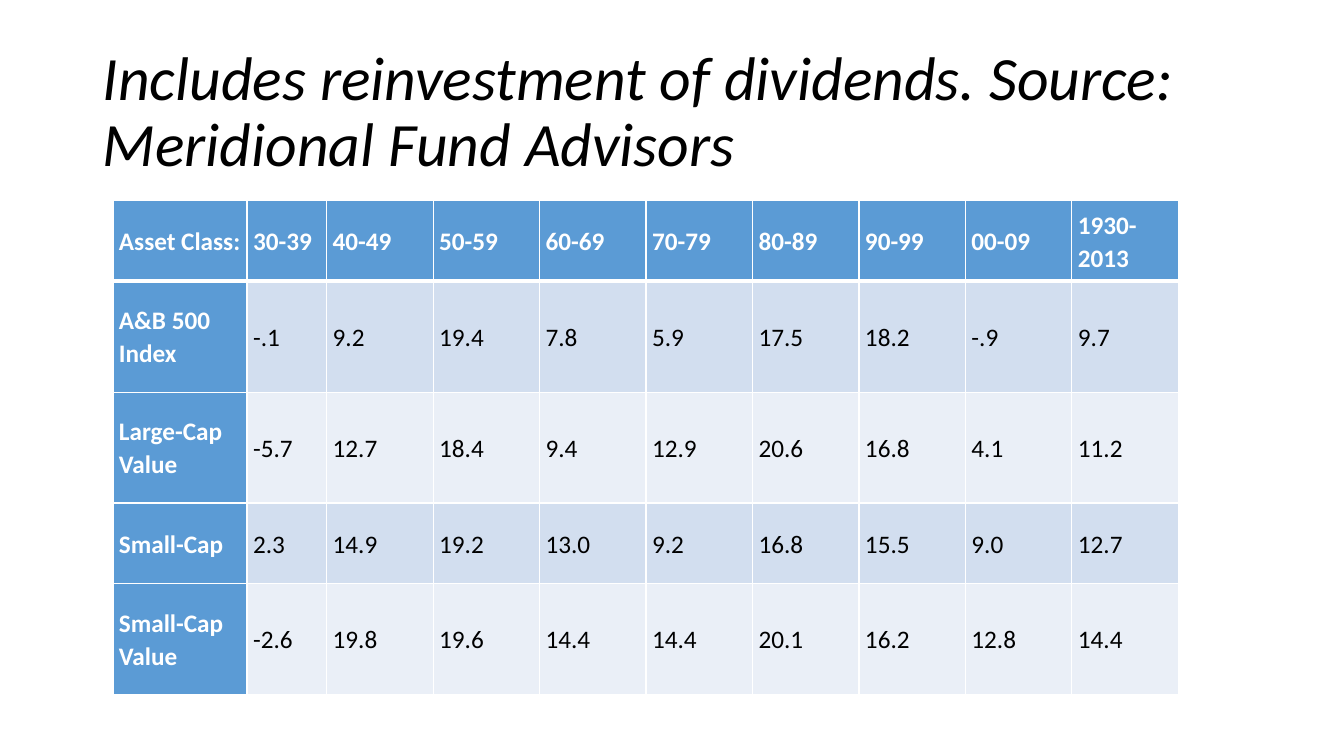
from lxml import etree
from pptx import Presentation
from pptx.dml.color import RGBColor
from pptx.enum.text import MSO_ANCHOR
from pptx.oxml.ns import qn
from pptx.util import Inches, Pt

# Content
TITLE = "Includes reinvestment of dividends. Source: Meridional Fund Advisors"
RETURNS = [
    ("Asset Class:", "30-39", "40-49", "50-59", "60-69", "70-79", "80-89", "90-99", "00-09", "1930-2013"),
    ("A&B 500 Index", "-.1", "9.2", "19.4", "7.8", "5.9", "17.5", "18.2", "-.9", "9.7"),
    ("Large-Cap Value", "-5.7", "12.7", "18.4", "9.4", "12.9", "20.6", "16.8", "4.1", "11.2"),
    ("Small-Cap", "2.3", "14.9", "19.2", "13.0", "9.2", "16.8", "15.5", "9.0", "12.7"),
    ("Small-Cap Value", "-2.6", "19.8", "19.6", "14.4", "14.4", "20.1", "16.2", "12.8", "14.4"),
]

# Style
FONT = "Calibri"
BLACK = RGBColor(0x00, 0x00, 0x00)
WHITE = RGBColor(0xFF, 0xFF, 0xFF)
BLUE = RGBColor(0x5B, 0x9B, 0xD5)
BANDS = (RGBColor(0xEA, 0xEF, 0xF7), RGBColor(0xD2, 0xDE, 0xEF))

# Table measures in inches
TABLE_W = 10.57
FIRST_COLS = [1.33, 0.79]
ROW_HEIGHTS = [0.8, 1.1, 1.1, 0.8, 1.1]
n_cols = len(RETURNS[0])
n_rest = n_cols - len(FIRST_COLS)
col_widths = FIRST_COLS + [(TABLE_W - sum(FIRST_COLS)) / n_rest] * n_rest


def set_font(p, size, color, bold=False, italic=False):
    f = p.font
    f.name, f.size, f.bold, f.italic = FONT, Pt(size), bold, italic
    f.color.rgb = color


def add_borders(cell, top, bottom):
    tcPr = cell._tc.get_or_add_tcPr()
    for side, width in (("L", 1), ("R", 1), ("T", top), ("B", bottom)):
        ln = etree.SubElement(tcPr, qn(f"a:ln{side}"), w=str(Pt(width)))
        fill = etree.SubElement(ln, qn("a:solidFill"))
        etree.SubElement(fill, qn("a:srgbClr"), val=str(WHITE))


def fill_cell(cell, text, r, c):
    heading = r == 0 or c == 0
    add_borders(cell, top=3 if r == 1 else 1, bottom=3 if r == 0 else 1)
    cell.fill.solid()
    cell.fill.fore_color.rgb = BLUE if heading else BANDS[r % 2]
    cell.vertical_anchor = MSO_ANCHOR.MIDDLE
    cell.margin_left = cell.margin_right = Inches(0.06)
    cell.margin_top = cell.margin_bottom = Inches(0.06)
    p = cell.text_frame.paragraphs[0]
    p.text = text
    p.line_spacing = 1.07
    p.space_after = Pt(0 if heading else 11.2)
    set_font(p, 18, WHITE if heading else BLACK, bold=heading)


prs = Presentation()
prs.slide_width, prs.slide_height = Inches(13.33), Inches(7.5)
s = prs.slides.add_slide(prs.slide_layouts[6])

# Title
tf = s.shapes.add_textbox(Inches(0.92), Inches(0.4), Inches(11.5), Inches(1.45)).text_frame
tf.word_wrap = True
tf.vertical_anchor = MSO_ANCHOR.MIDDLE
p = tf.paragraphs[0]
p.text = TITLE
p.line_spacing = 0.9
set_font(p, 44, BLACK, italic=True)

# Table of returns by decade
table = s.shapes.add_table(len(RETURNS), n_cols, Inches(1.12), Inches(1.99),
                           Inches(TABLE_W), Inches(sum(ROW_HEIGHTS))).table
for col, width in zip(table.columns, col_widths):
    col.width = Inches(width)
for row, height in zip(table.rows, ROW_HEIGHTS):
    row.height = Inches(height)
for r, values in enumerate(RETURNS):
    for c, text in enumerate(values):
        fill_cell(table.cell(r, c), text, r, c)

prs.save("out.pptx")
